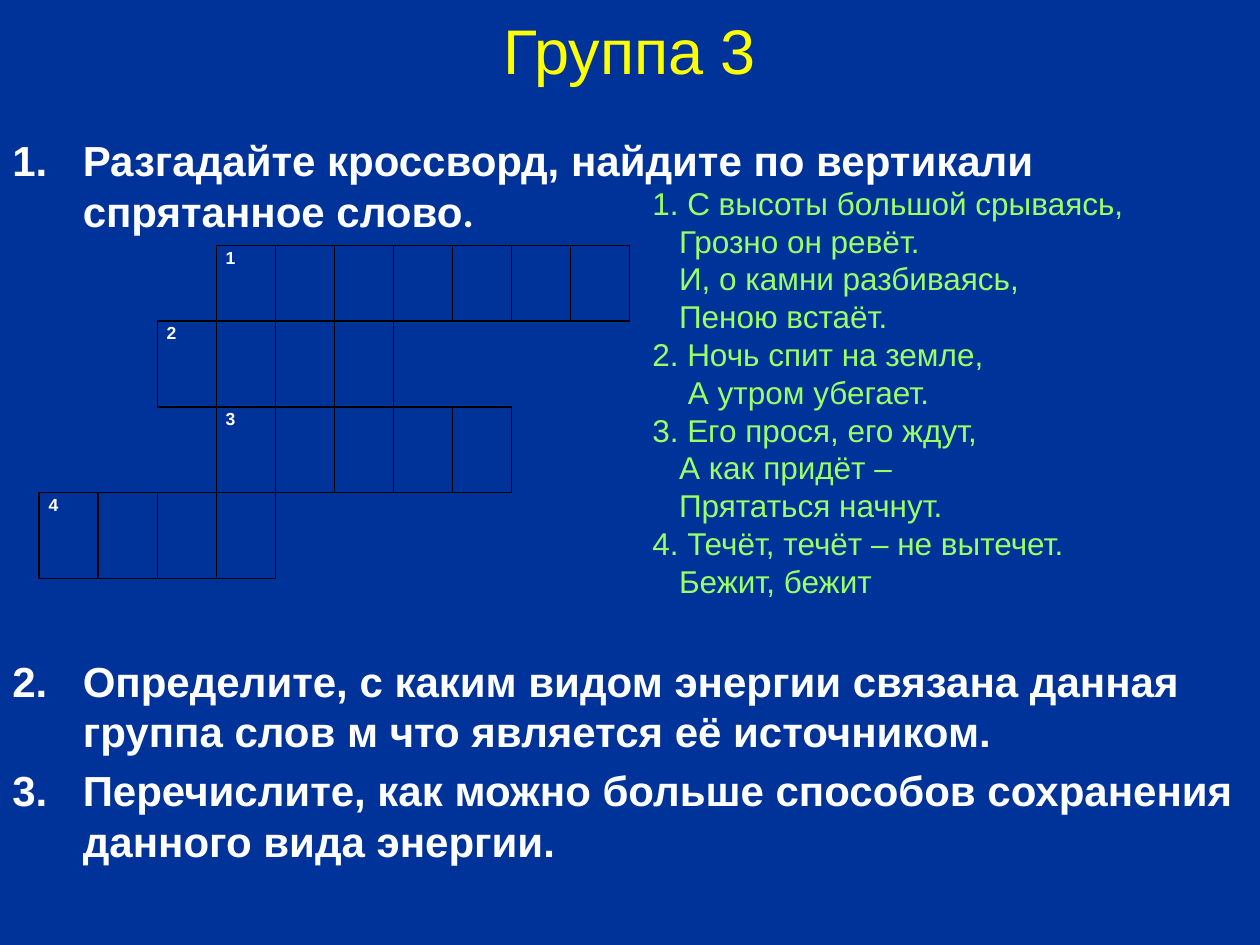
from lxml.etree import SubElement
from pptx import Presentation
from pptx.dml.color import RGBColor
from pptx.enum.text import MSO_ANCHOR, PP_ALIGN
from pptx.oxml.ns import qn
from pptx.util import Cm, Pt

# Content
TITLE = "Группа 3"
# Each task: space before in points, then (text, font) runs
TASKS = [
    (4.8, [("Разгадайте кроссворд, найдите по вертикали спрятанное слово", "Arial"),
           (".", "Calibri")]),
    (240, [("Определите, с каким видом энергии связана данная группа слов "
            "м что является её источником.", "Arial")]),
    (4.8, [("Перечислите, как можно больше способов сохранения "
            "данного вида энергии.", "Arial")]),
]
# Each line: indent in spaces' width, text
RIDDLES = [
    (0, "1. С высоты большой срываясь,"),
    (3, "Грозно он ревёт."),
    (3, "И, о камни разбиваясь,"),
    (3, "Пеною встаёт."),
    (0, "2. Ночь спит на земле,"),
    (4, "А утром убегает."),
    (0, "3. Его прося, его ждут,"),
    (3, "А как придёт –"),
    (3, "Прятаться начнут."),
    (0, "4. Течёт, течёт – не вытечет."),
    (3, "Бежит, бежит"),
]
# Crossword words: first column, letter count, row height in cm
WORDS = [(3, 7, 1.52), (2, 4, 1.73), (3, 5, 1.73), (0, 4, 1.73)]
COLUMNS = 10
CELL_WIDTH = 1.19
SPACE_WIDTH = 0.18
PLAIN_TABLE_STYLE = "{2D5ABB26-0587-4C30-8999-92F81FD0307C}"
BLUE, YELLOW, WHITE, GREEN, BLACK = "003399", "FFFF00", "FFFFFF", "99FF66", "000000"


def color(fill_or_font_color, value):
    fill_or_font_color.rgb = RGBColor.from_string(value)


def add_span(para, text, size, value, bold=False, font="Arial"):
    span = para.add_run()
    span.text = text
    span.font.size = Pt(size)
    span.font.bold = bold
    span.font.name = font
    color(span.font.color, value)


def add_paras(frame, count):
    return [frame.paragraphs[0]] + [frame.add_paragraph() for _ in range(count - 1)]


def add_box(page, left, top, width, height):
    frame = page.shapes.add_textbox(Cm(left), Cm(top), Cm(width), Cm(height)).text_frame
    frame.word_wrap = True
    return frame


def draw_borders(cell):
    properties = cell._tc.get_or_add_tcPr()
    for side in ("lnL", "lnR", "lnT", "lnB"):
        line = SubElement(properties, qn(f"a:{side}"), w=str(Pt(1)))
        fill = SubElement(line, qn("a:solidFill"))
        SubElement(fill, qn("a:srgbClr"), val=BLACK)


def add_tasks(page):
    frame = add_box(page, 0, 2.59, 25.4, 16.46)
    for para, (gap, spans) in zip(add_paras(frame, len(TASKS)), TASKS):
        para.space_before = Pt(gap)
        properties = para._p.get_or_add_pPr()
        properties.set("marL", str(Cm(1.42)))
        properties.set("indent", str(Cm(-1.42)))
        SubElement(properties, qn("a:buFont"), typeface="Arial")
        SubElement(properties, qn("a:buAutoNum"), type="arabicPeriod")
        for text, font in spans:
            add_span(para, text, 24, WHITE, True, font)


def add_crossword(page):
    heights = [height for _, _, height in WORDS]
    frame = page.shapes.add_table(len(WORDS), COLUMNS, Cm(0.79), Cm(4.95),
                                  Cm(CELL_WIDTH * COLUMNS), Cm(sum(heights)))
    table = frame.table
    table.first_row = table.horz_banding = False
    table._tbl.tblPr.find(qn("a:tableStyleId")).text = PLAIN_TABLE_STYLE
    for column in table.columns:
        column.width = Cm(CELL_WIDTH)
    for row, (start, length, height) in enumerate(WORDS):
        table.rows[row].height = Cm(height)
        for index in range(COLUMNS):
            cell = table.cell(row, index)
            cell.margin_left = cell.margin_right = Cm(0.19)
            cell.margin_top = cell.margin_bottom = 0
            if start <= index < start + length:
                draw_borders(cell)
            cell.fill.background()
        para = table.cell(row, start).text_frame.paragraphs[0]
        para.line_spacing = 1.15
        add_span(para, str(row + 1), 10, WHITE, True)


def add_riddles(page):
    frame = add_box(page, 12.9, 3.58, 11.91, 8.71)
    for para, (indent, text) in zip(add_paras(frame, len(RIDDLES)), RIDDLES):
        para._p.get_or_add_pPr().set("marL", str(Cm(indent * SPACE_WIDTH)))
        add_span(para, text, 18, GREEN)


def main():
    deck = Presentation()
    deck.slide_width, deck.slide_height = Cm(25.4), Cm(19.05)
    page = deck.slides.add_slide(deck.slide_layouts[5])
    page.background.fill.solid()
    color(page.background.fill.fore_color, BLUE)

    # Title
    title = page.shapes.title
    title.left, title.top, title.width, title.height = Cm(1.27), Cm(0), Cm(22.86), Cm(1.98)
    title.text_frame.vertical_anchor = MSO_ANCHOR.MIDDLE
    para = title.text_frame.paragraphs[0]
    para.alignment = PP_ALIGN.CENTER
    add_span(para, TITLE, 36, YELLOW)

    # Tasks, crossword and its riddles
    add_tasks(page)
    add_crossword(page)
    add_riddles(page)
    deck.save("out.pptx")


if __name__ == "__main__":
    main()
